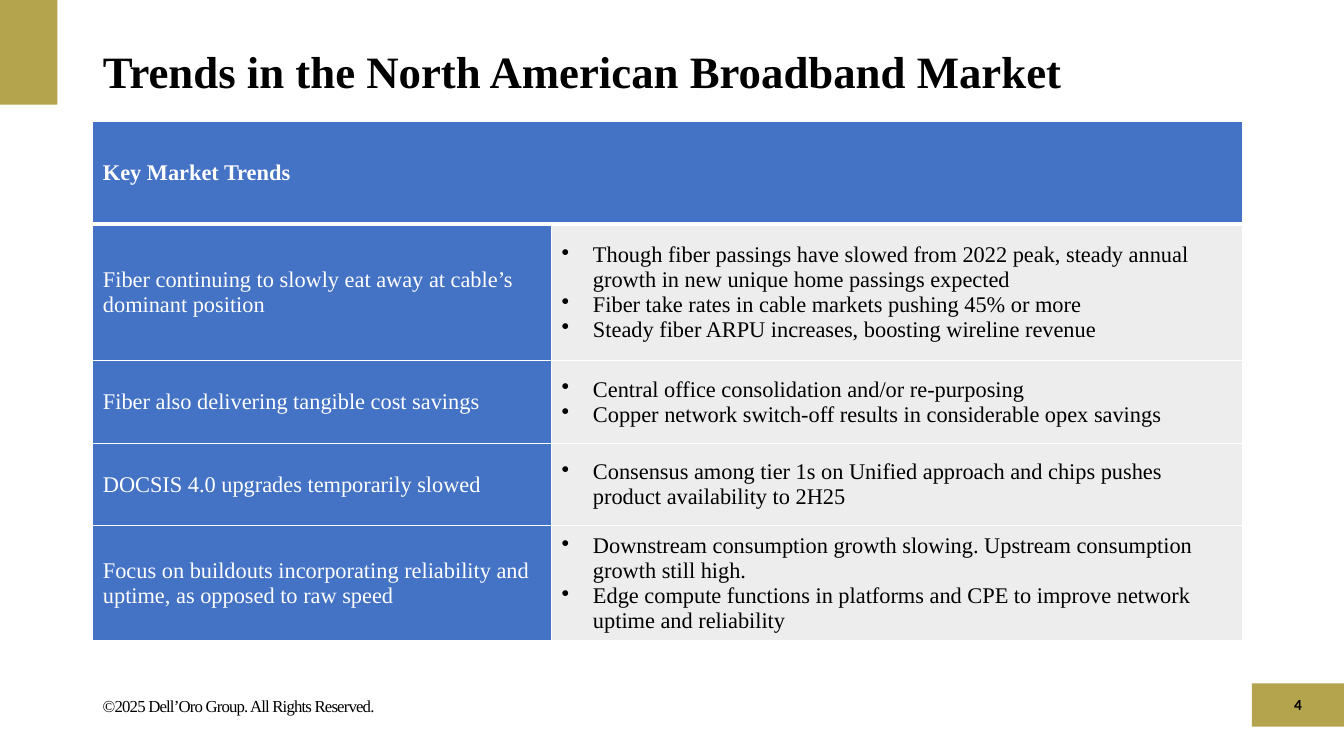
from dataclasses import dataclass
from typing import Any

from lxml import etree
from pptx import Presentation
from pptx.dml.color import RGBColor
from pptx.enum.shapes import MSO_SHAPE
from pptx.enum.text import MSO_ANCHOR, MSO_AUTO_SIZE, PP_ALIGN
from pptx.oxml.ns import qn
from pptx.util import Cm, Pt

RECTANGLE = MSO_SHAPE.RECTANGLE
MIDDLE = MSO_ANCHOR.MIDDLE
CENTER = PP_ALIGN.CENTER
NO_AUTOFIT = MSO_AUTO_SIZE.NONE

BLACK = RGBColor(0x00, 0x00, 0x00)
WHITE = RGBColor(0xFF, 0xFF, 0xFF)
GOLD = RGBColor(0xB3, 0xA4, 0x4D)
BLUE = RGBColor(0x44, 0x72, 0xC4)
GRAY = RGBColor(0xED, 0xED, 0xED)

LEFT = 2.34
COLUMN_WIDTHS = (11.56, 17.42)
ROW_HEIGHTS = (2.59, 3.45, 2.08, 2.08, 2.9)
TRENDS = (
    ("Fiber continuing to slowly eat away at cable’s dominant position",
     ("Though fiber passings have slowed from 2022 peak, steady annual growth in new unique home passings expected",
      "Fiber take rates in cable markets pushing 45% or more",
      "Steady fiber ARPU increases, boosting wireline revenue")),
    ("Fiber also delivering tangible cost savings",
     ("Central office consolidation and/or re-purposing",
      "Copper network switch-off results in considerable opex savings")),
    ("DOCSIS 4.0 upgrades temporarily slowed",
     ("Consensus among tier 1s on Unified approach and chips pushes product availability to 2H25",)),
    ("Focus on buildouts incorporating reliability and uptime, as opposed to raw speed",
     ("Downstream consumption growth slowing. Upstream consumption growth still high.",
      "Edge compute functions in platforms and CPE to improve network uptime and reliability")),
)


@dataclass
class SlideBuilder:
    """Hold the slide and its text style, and add each kind of element."""

    slide: Any
    font_name: str = "Times New Roman"
    body_size: int = 16

    def format_text(self, text_frame, size, color, bold=False, font_name=None):
        for paragraph in text_frame.paragraphs:
            for run in paragraph.runs:
                run.font.name = font_name or self.font_name
                run.font.size = Pt(size)
                run.font.bold = bold
                run.font.color.rgb = color

    def title(self, text, left, top, width, height):
        shape = self.slide.shapes.title
        shape.left, shape.top, shape.width, shape.height = map(Cm, (left, top, width, height))
        text_frame = shape.text_frame
        text_frame.text = text
        text_frame.auto_size = NO_AUTOFIT
        text_frame.vertical_anchor = MIDDLE
        text_frame.paragraphs[0].alignment = PP_ALIGN.LEFT
        text_frame.paragraphs[0].line_spacing = 0.9
        self.format_text(text_frame, 32, BLACK, bold=True)

    def block(self, left, top, width, height):
        shape = self.slide.shapes.add_shape(RECTANGLE, *map(Cm, (left, top, width, height)))
        shape.shadow.inherit = False
        shape.fill.solid()
        shape.fill.fore_color.rgb = GOLD
        shape.line.fill.background()

    def text(self, text, left, top, width, height, size, **style):
        box = self.slide.shapes.add_textbox(*map(Cm, (left, top, width, height)))
        text_frame = box.text_frame
        text_frame.word_wrap = True
        text_frame.text = text
        self.format_text(text_frame, size, BLACK, **style)
        return text_frame

    def borders(self, cell, top=1, bottom=1):
        properties = cell._tc.get_or_add_tcPr()
        for side, width in (("L", 1), ("R", 1), ("T", top), ("B", bottom)):
            line = etree.SubElement(properties, qn(f"a:ln{side}"), w=str(Pt(width)))
            fill = etree.SubElement(line, qn("a:solidFill"))
            etree.SubElement(fill, qn("a:srgbClr"), val=str(WHITE))

    def cell(self, cell, text, fill, color, bold=False):
        cell.fill.solid()
        cell.fill.fore_color.rgb = fill
        cell.vertical_anchor = MIDDLE
        cell.text_frame.text = text
        self.format_text(cell.text_frame, self.body_size, color, bold)

    def bullets(self, text_frame):
        indent = Cm(0.79)
        for paragraph in text_frame.paragraphs:
            properties = paragraph._p.get_or_add_pPr()
            properties.set("marL", str(indent))
            properties.set("indent", str(-indent))
            etree.SubElement(properties, qn("a:buChar"), char="•")

    def trend_table(self, heading, trends, left, top):
        size = (left, top, sum(COLUMN_WIDTHS), sum(ROW_HEIGHTS))
        table = self.slide.shapes.add_table(
            len(ROW_HEIGHTS), len(COLUMN_WIDTHS), *map(Cm, size)).table
        table.horz_banding = False
        for column, width in zip(table.columns, COLUMN_WIDTHS):
            column.width = Cm(width)
        for index, (row, height) in enumerate(zip(table.rows, ROW_HEIGHTS)):
            row.height = Cm(height)
            for cell in row.cells:
                self.borders(cell, top=3 if index == 1 else 1, bottom=3 if index == 0 else 1)
        table.cell(0, 0).merge(table.cell(0, 1))
        self.cell(table.cell(0, 0), heading, BLUE, WHITE, bold=True)
        for index, (trend, points) in enumerate(trends, start=1):
            self.cell(table.cell(index, 0), trend, BLUE, WHITE)
            details = table.cell(index, 1)
            self.cell(details, "\n".join(points), GRAY, BLACK)
            self.bullets(details.text_frame)


def main():
    presentation = Presentation()
    presentation.slide_width = Cm(33.87)
    presentation.slide_height = Cm(19.05)
    builder = SlideBuilder(presentation.slides.add_slide(presentation.slide_layouts[5]))

    builder.block(0, 0, 1.45, 2.64)
    builder.block(31.55, 17.22, 2.32, 1.09)
    builder.title("Trends in the North American Broadband Market", LEFT, 1.02, 29.21, 1.68)
    builder.trend_table("Key Market Trends", TRENDS, LEFT, 3.05)

    footer = builder.text("©2025 Dell’Oro Group. All Rights Reserved.", LEFT, 17.4, 8.05, 0.76, 12)
    footer.paragraphs[0].runs[0].font._element.set("spc", "-60")

    page_number = builder.text("4", 31.55, 17.17, 2.32, 1.17, 11, bold=True, font_name="Calibri")
    page_number.vertical_anchor = MIDDLE
    page_number.paragraphs[0].alignment = CENTER

    presentation.save("out.pptx")


if __name__ == "__main__":
    main()
